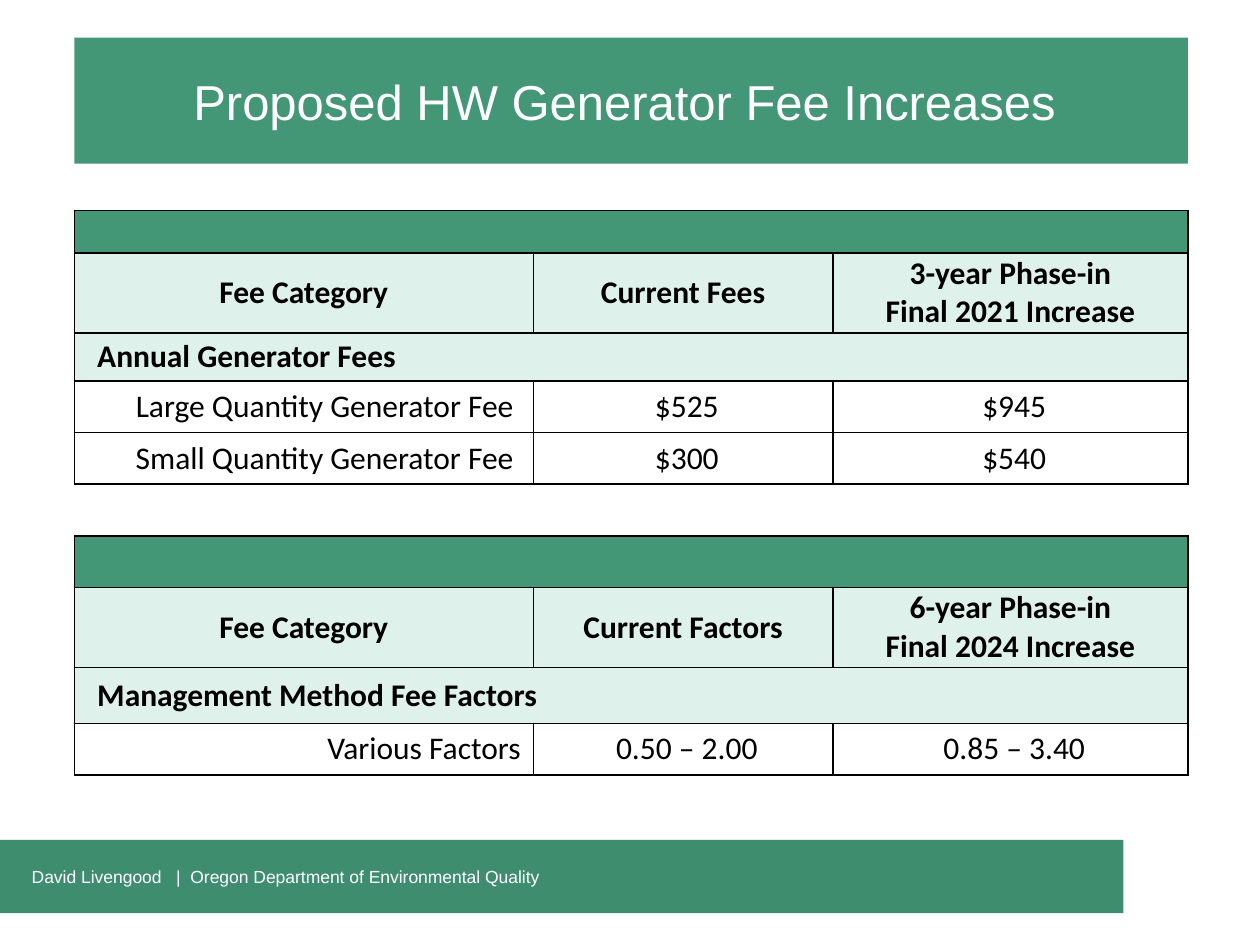
from lxml.etree import SubElement
from pptx import Presentation
from pptx.dml.color import RGBColor
from pptx.enum.shapes import MSO_SHAPE
from pptx.enum.text import MSO_ANCHOR, PP_ALIGN
from pptx.oxml.ns import qn
from pptx.util import Cm, Pt

GREEN = RGBColor(0x43, 0x97, 0x77)
FOOTER_GREEN = RGBColor(0x3F, 0x8D, 0x6F)
PALE_GREEN = RGBColor(0xDF, 0xF1, 0xEB)
WHITE = RGBColor(0xFF, 0xFF, 0xFF)
BLACK = RGBColor(0, 0, 0)

TITLE = "Proposed HW Generator Fee Increases "
FOOTER = "David Livengood   |  Oregon Department of Environmental Quality"

# Row kind, row height in cm, cell texts
ROWS = [
    ("band", 0.86, []),
    ("header", 1.6, ["Fee Category", "Current Fees", "3-year Phase-in\nFinal 2021 Increase"]),
    ("section", 0.97, ["Annual Generator Fees"]),
    ("data", 1.04, ["Large Quantity Generator Fee ", "$525", "$945"]),
    ("data", 1.04, ["Small Quantity Generator Fee ", "$300", "$540"]),
    ("gap", 1.04, []),
    ("band", 1.04, []),
    ("header", 1.6, ["Fee Category", "Current Factors", "6-year Phase-in\nFinal 2024 Increase"]),
    ("section", 1.13, ["Management Method Fee Factors"]),
    ("data", 1.04, ["Various Factors", "0.50 – 2.00", "0.85 – 3.40"]),
]
COLUMN_WIDTHS = [9.25, 6.04, 7.16]
FILLS = {"band": GREEN, "header": PALE_GREEN, "section": PALE_GREEN, "data": WHITE, "gap": WHITE}
LEFT, TABLE_TOP = 1.5, 4.24
WIDTH = sum(COLUMN_WIDTHS)


def write_text(frame, text, font_name, size, color, alignment, bold=False):
    frame.word_wrap = True
    for index, line in enumerate(text.split("\n")):
        paragraph = frame.add_paragraph() if index else frame.paragraphs[0]
        paragraph.alignment = alignment
        run = paragraph.add_run()
        run.text = line
        run.font.name = font_name
        run.font.size = Pt(size)
        run.font.bold = bold
        run.font.color.rgb = color


def add_bar(slide, left, top, width, height, fill, text, size, alignment):
    bar = slide.shapes.add_shape(MSO_SHAPE.RECTANGLE, Cm(left), Cm(top), Cm(width), Cm(height))
    bar.shadow.inherit = False
    bar.fill.solid()
    bar.fill.fore_color.rgb = fill
    bar.line.fill.background()
    bar.text_frame.vertical_anchor = MSO_ANCHOR.MIDDLE
    write_text(bar.text_frame, text, "Arial", size, WHITE, alignment)
    return bar


def set_borders(cell, sides):
    """Draw thin black lines on the given sides; borders must precede the fill."""
    properties = cell._tc.get_or_add_tcPr()
    for side in ("L", "R", "T", "B"):
        visible = side in sides
        line = SubElement(properties, qn(f"a:ln{side}"), w=str(Pt(1) if visible else 0))
        if visible:
            solid = SubElement(line, qn("a:solidFill"))
            SubElement(solid, qn("a:srgbClr"), val=str(BLACK))
        else:
            SubElement(line, qn("a:noFill"))


def format_cell(cell, kind, column):
    set_borders(cell, "TB" if kind == "gap" else "LRTB")
    cell.fill.solid()
    cell.fill.fore_color.rgb = FILLS[kind]
    cell.vertical_anchor = MSO_ANCHOR.MIDDLE
    cell.margin_left = cell.margin_right = cell.margin_top = cell.margin_bottom = Cm(0.03)
    if kind == "section":
        cell.margin_left = Cm(0.46)
    elif kind == "data" and column == 0:
        cell.margin_right = Cm(0.25)
    elif kind == "data":
        cell.margin_left = Cm(0.18)


def text_alignment(kind, column):
    if kind == "section":
        return PP_ALIGN.LEFT
    if kind == "data" and column == 0:
        return PP_ALIGN.RIGHT
    return PP_ALIGN.CENTER


def add_fee_table(slide):
    frame = slide.shapes.add_table(
        len(ROWS), len(COLUMN_WIDTHS), Cm(LEFT), Cm(TABLE_TOP),
        Cm(WIDTH), Cm(sum(height for _, height, _ in ROWS)))
    table = frame.table
    table.first_row = table.horz_banding = False
    for column, width in zip(table.columns, COLUMN_WIDTHS):
        column.width = Cm(width)
    for row_index, (kind, height, texts) in enumerate(ROWS):
        row = table.rows[row_index]
        row.height = Cm(height)
        for column_index, cell in enumerate(row.cells):
            format_cell(cell, kind, column_index)
        if kind in ("band", "section"):
            row.cells[0].merge(row.cells[len(COLUMN_WIDTHS) - 1])
        for column_index, text in enumerate(texts):
            write_text(row.cells[column_index].text_frame, text, "Calibri", 18, BLACK,
                       text_alignment(kind, column_index), kind != "data")


def main():
    presentation = Presentation()
    presentation.slide_width, presentation.slide_height = Cm(25.4), Cm(19.05)
    slide = presentation.slides.add_slide(presentation.slide_layouts[6])
    add_bar(slide, LEFT, 0.76, WIDTH, 2.54, GREEN, TITLE, 28, PP_ALIGN.CENTER)
    footer = add_bar(slide, 0, 16.93, 22.65, 1.48, FOOTER_GREEN, FOOTER, 10, PP_ALIGN.LEFT)
    footer.text_frame.margin_left = Cm(0.64)
    add_fee_table(slide)
    presentation.save("out.pptx")


if __name__ == "__main__":
    main()
